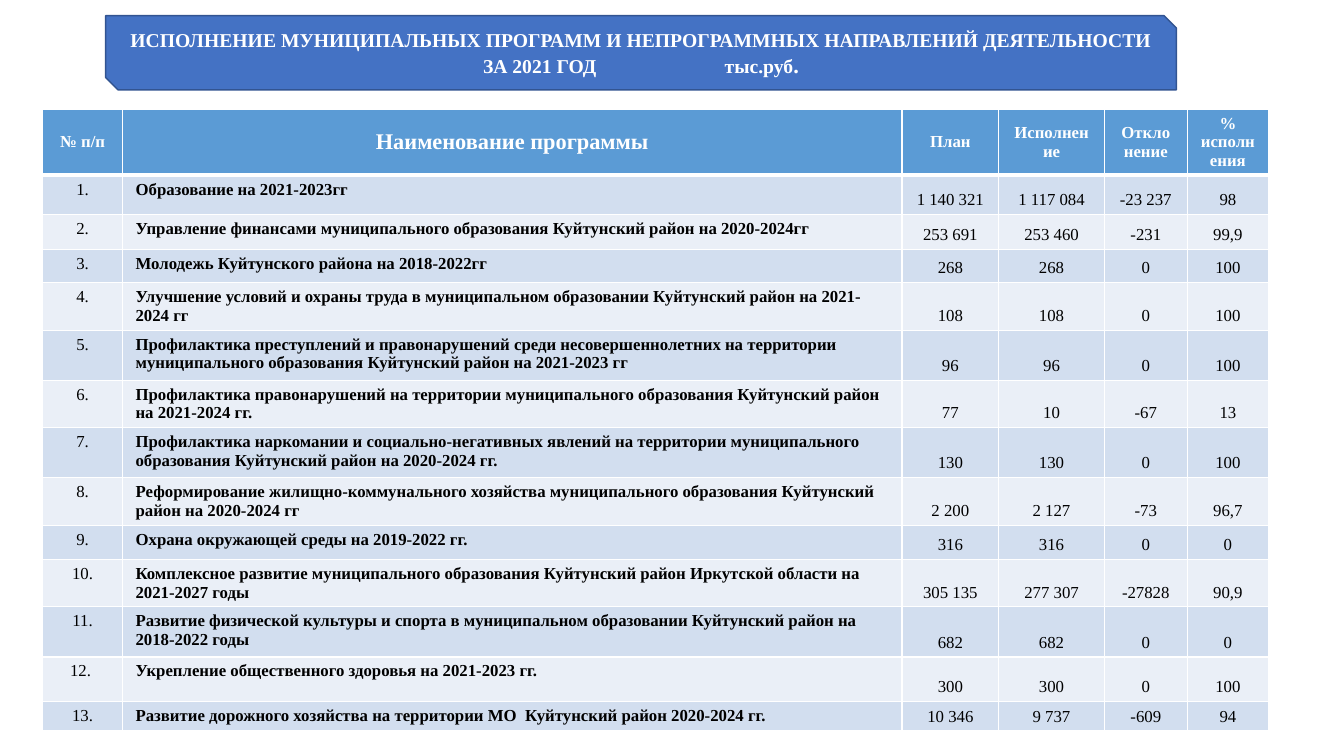
from lxml import etree
from pptx import Presentation
from pptx import util as u
from pptx.dml.color import RGBColor
from pptx.enum import shapes, text
from pptx.oxml import ns

Pt = u.Pt
MID, CENTER = text.MSO_ANCHOR.MIDDLE, text.PP_ALIGN.CENTER

HEADS = ["№ п/п", "Наименование программы", "План", "Исполнение",
         "Отклонение", "% исполнения"]
# Row height, number, programme, plan, actual, difference, percent
ROWS = [
    (28, "1.", "Образование на 2021-2023гг",
     "1 140 321", "1 117 084", "-23 237", "98"),
    (25, "2.", "Управление финансами муниципального образования Куйтунский район на 2020-2024гг",
     "253 691", "253 460", "-231", "99,9"),
    (23.8, "3.", "Молодежь Куйтунского района на 2018-2022гг",
     "268", "268", "0", "100"),
    (33.8, "4.", "Улучшение условий и охраны труда в муниципальном образовании Куйтунский район на 2021-2024 гг",
     "108", "108", "0", "100"),
    (35.8, "5.", "Профилактика преступлений и правонарушений среди несовершеннолетних на территории муниципального образования Куйтунский район на 2021-2023 гг",
     "96", "96", "0", "100"),
    (33.8, "6.", "Профилактика правонарушений на территории муниципального образования Куйтунский район на 2021-2024 гг.",
     "77", "10", "-67", "13"),
    (35.8, "7.", "Профилактика наркомании и социально-негативных явлений на территории муниципального образования Куйтунский район на 2020-2024 гг.",
     "130", "130", "0", "100"),
    (33.8, "8.", "Реформирование жилищно-коммунального хозяйства муниципального образования Куйтунский район на 2020-2024 гг",
     "2 200", "2 127", "-73", "96,7"),
    (24.5, "9.", "Охрана окружающей среды на 2019-2022 гг.",
     "316", "316", "0", "0"),
    (33.8, "10.", "Комплексное развитие муниципального образования Куйтунский район Иркутской области на 2021-2027 годы",
     "305 135", "277 307", "-27828", "90,9"),
    (35.8, "11.", "Развитие физической культуры и спорта в муниципальном образовании Куйтунский район на 2018-2022 годы",
     "682", "682", "0", "0"),
    (31.6, "12. ", "Укрепление общественного здоровья на 2021-2023 гг.",
     "300", "300", "0", "100"),
    (21.4, "13.", "Развитие дорожного хозяйства на территории МО  Куйтунский район 2020-2024 гг.",
     "10 346", "9 737", "-609", "94"),
]


def color(code):
    return RGBColor.from_string(code)


class Deck:
    face = "Times New Roman"
    white, black = "FFFFFF", "000000"
    blue, edge = "4472C4", "325491"
    head, bands = "5B9BD5", ("D2DEEF", "EAEFF7")

    def __init__(self):
        self.prs = Presentation()
        self.prs.slide_width, self.prs.slide_height = Pt(960), Pt(540)
        self.slide = self.prs.slides.add_slide(self.prs.slide_layouts[6])

    def style(self, run, size, ink, bold):
        font = run.font
        font.name, font.size, font.bold = self.face, Pt(size), bold
        font.color.rgb = color(ink)

    def banner(self, x, y, w, h, parts):
        """Parts are (text, size, letter spacing)."""
        box = self.slide.shapes.add_shape(
            shapes.MSO_SHAPE.SNIP_2_DIAG_RECTANGLE, Pt(x), Pt(y), Pt(w), Pt(h))
        box.shadow.inherit = False
        box.fill.solid()
        box.fill.fore_color.rgb = color(self.blue)
        box.line.color.rgb = color(self.edge)
        box.line.width = Pt(1)
        frame = box.text_frame
        frame.word_wrap, frame.vertical_anchor = True, MID
        para = frame.paragraphs[0]
        para.alignment = CENTER
        for words, size, gap in parts:
            run = para.add_run()
            run.text = words
            self.style(run, size, self.white, True)
            if gap:
                run.font._element.set("spc", str(gap * 100))

    def border(self, cell, top, low):
        props = cell._tc.get_or_add_tcPr()
        for side, width in zip("LRTB", (1, 1, top, low)):
            line = etree.SubElement(props, ns.qn("a:ln" + side), w=str(Pt(width)))
            fill = etree.SubElement(line, ns.qn("a:solidFill"))
            etree.SubElement(fill, ns.qn("a:srgbClr"), val=self.white)

    def cell(self, cell, words, fill, ink, size, bold, align, anchor, top, low):
        self.border(cell, top, low)
        cell.fill.solid()
        cell.fill.fore_color.rgb = color(fill)
        cell.margin_left = cell.margin_right = Pt(9.4)
        cell.margin_top = cell.margin_bottom = Pt(3.6)
        cell.vertical_anchor = anchor
        cell.text_frame.text = words
        para = cell.text_frame.paragraphs[0]
        para.alignment = align
        self.style(para.runs[0], size, ink, bold)

    def table(self, x, y, widths, tall, heads, rows):
        high = tall + sum(row[0] for row in rows)
        grid = self.slide.shapes.add_table(
            len(rows) + 1, len(widths), Pt(x), Pt(y), Pt(sum(widths)), Pt(high)).table
        grid.first_row = grid.horz_banding = False
        for col, width in zip(grid.columns, widths):
            col.width = Pt(width)
        # Header row
        grid.rows[0].height = Pt(tall)
        for c, words in enumerate(heads):
            self.cell(grid.cell(0, c), words, self.head, self.white,
                      16 if c == 1 else 12, True, CENTER, MID, 1, 3)
        # Programme rows
        for r, (height, *items) in enumerate(rows, 1):
            grid.rows[r].height = Pt(height)
            for c, words in enumerate(items):
                name = c == 1
                self.cell(grid.cell(r, c), words, self.bands[(r - 1) % 2], self.black,
                          12, name, text.PP_ALIGN.LEFT if name else CENTER,
                          text.MSO_ANCHOR.TOP if c < 2 else text.MSO_ANCHOR.BOTTOM,
                          3 if r == 1 else 1, 1)


def main():
    deck = Deck()
    # Title banner, with one widened space before the unit
    deck.banner(75.5, 11.2, 764.8, 53, [
        ("ИСПОЛНЕНИЕ МУНИЦИПАЛЬНЫХ ПРОГРАММ И НЕПРОГРАММНЫХ НАПРАВЛЕНИЙ "
         "ДЕЯТЕЛЬНОСТИ ЗА 2021 ГОД", 14, 0),
        (" ", 14, 88), ("тыс.руб", 14, 0), (".", 16, 0)])
    # Programme table
    deck.table(30.5, 78, [57, 556.8, 69.2, 75.4, 59.3, 58], 47, HEADS, ROWS)
    deck.prs.save("out.pptx")


if __name__ == "__main__":
    main()
